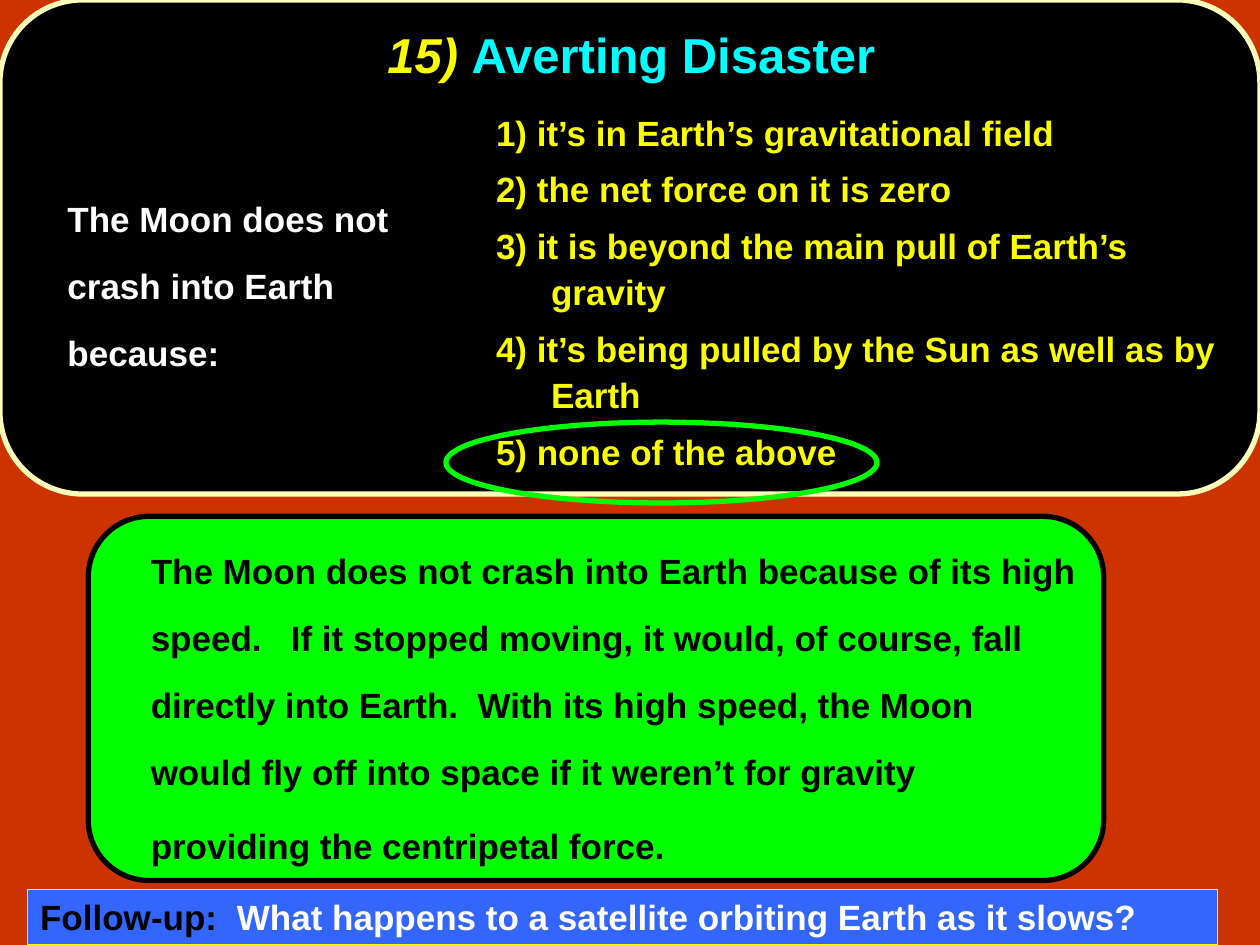
from pptx import Presentation
from pptx.dml.color import RGBColor
from pptx.enum.shapes import MSO_SHAPE as SHAPE
from pptx.enum.text import MSO_ANCHOR as ANCHOR, MSO_AUTO_SIZE as AUTO, PP_ALIGN as ALIGN
from pptx.util import Cm, Pt

# Content: each paragraph is a list of (text, size, colour, italic) runs
BLACK, WHITE, YELLOW, CYAN = "000000", "FFFFFF", "FAFD00", "00FFFF"
GREEN, BLUE, CREAM, RUST = "00FF00", "3366FF", "FCFEB9", "CC3300"

TITLE = [("15) ", 28, YELLOW, True), ("Averting Disaster", 28, CYAN, False)]
QUESTION = [[("\tThe Moon does not crash into Earth because:", 20, WHITE, False)]]
ANSWERS = [
    "it’s in Earth’s gravitational field",
    "the net force on it is zero",
    "it is beyond the main pull of Earth’s gravity",
    "it’s being pulled by the Sun as well as by Earth",
    "none of the above",
]
EXPLANATION = [[
    ("\tThe Moon does not crash into Earth because of its high speed.   "
     "If it stopped moving, it would, of course, fall directly into Earth.  "
     "With its high speed, the Moon would fly off into space if it weren’t "
     "for gravity providing the centripetal force.", 20, BLACK, False),
    (" ", 22, BLACK, False),
]]
FOLLOW_UP = [
    ("Follow-up:", 20, BLACK, False),
    ("  What happens to a satellite orbiting Earth as it slows?", 20, WHITE, False),
]
HANG = Cm(1.11)


def rgb(value):
    return RGBColor.from_string(value)


def place(sp, box):
    sp.left, sp.top, sp.width, sp.height = (Cm(v) for v in box)


def write_runs(p, runs):
    for text, size, color, italic in runs:
        r = p.add_run()
        r.text = text
        r.font.name, r.font.size = "Arial", Pt(size)
        r.font.bold, r.font.italic = True, italic
        r.font.color.rgb = rgb(color)


def add_panel(s, kind, box, fill, line, width=3):
    sp = s.shapes.add_shape(kind, *(Cm(v) for v in box))
    sp.shadow.inherit = False
    if fill:
        sp.fill.solid()
        sp.fill.fore_color.rgb = rgb(fill)
    else:
        sp.fill.background()
    sp.line.color.rgb = rgb(line)
    sp.line.width = Pt(width)
    return sp


def add_hanging_text(s, box, paragraphs, spacing, before):
    tf = s.shapes.add_textbox(*(Cm(v) for v in box)).text_frame
    tf.word_wrap = True
    for i, runs in enumerate(paragraphs):
        p = tf.add_paragraph() if i else tf.paragraphs[0]
        p.line_spacing, p.space_before = spacing, Pt(before)
        pPr = p._p.get_or_add_pPr()
        pPr.set("marL", str(HANG))
        pPr.set("indent", str(-HANG))
        write_runs(p, runs)


prs = Presentation()
prs.slide_width, prs.slide_height = Cm(25.4), Cm(19.05)
s = prs.slides.add_slide(prs.slide_layouts[5])
s.background.fill.solid()
s.background.fill.fore_color.rgb = rgb(RUST)

# Explanation
sp = add_panel(s, SHAPE.ROUNDED_RECTANGLE, (1.78, 10.41, 20.47, 7.34), GREEN, BLACK)
sp.adjustments[0] = 0.167
add_hanging_text(s, (1.68, 10.44, 20.32, 5.11), EXPLANATION, 1.6, 6)

# Question panel, with the title brought in front of it
sp = add_panel(s, SHAPE.ROUNDED_RECTANGLE, (0, 0, 25.4, 9.96), BLACK, CREAM)
sp.adjustments[0] = 0.167
title = s.shapes.title
title.element.getparent().append(title.element)
place(title, (2.59, 0, 20.27, 2.34))
tf = title.text_frame
tf.auto_size, tf.vertical_anchor, tf.word_wrap = AUTO.NONE, ANCHOR.MIDDLE, True
p = tf.paragraphs[0]
p.alignment, p.line_spacing = ALIGN.CENTER, 0.9
write_runs(p, TITLE)

# Answers, with the right one ringed
answers = [[(f"{n}) {text}", 20, YELLOW, False)] for n, text in enumerate(ANSWERS, 1)]
add_hanging_text(s, (9.75, 2.03, 15.65, 6.93), answers, 1.1, 6)
add_panel(s, SHAPE.OVAL, (8.99, 8.51, 8.69, 1.63), None, GREEN)
add_hanging_text(s, (0, 3.35, 8.89, 4.39), QUESTION, 1.6, 10)

# Follow-up bar
sp = add_panel(s, SHAPE.RECTANGLE, (0.56, 17.93, 23.98, 1.12), BLUE, YELLOW, 0.75)
tf = sp.text_frame
tf.word_wrap, tf.auto_size = True, AUTO.SHAPE_TO_FIT_TEXT
tf.vertical_anchor = ANCHOR.TOP
p = tf.paragraphs[0]
p.alignment = ALIGN.LEFT
write_runs(p, FOLLOW_UP)

prs.save("out.pptx")
